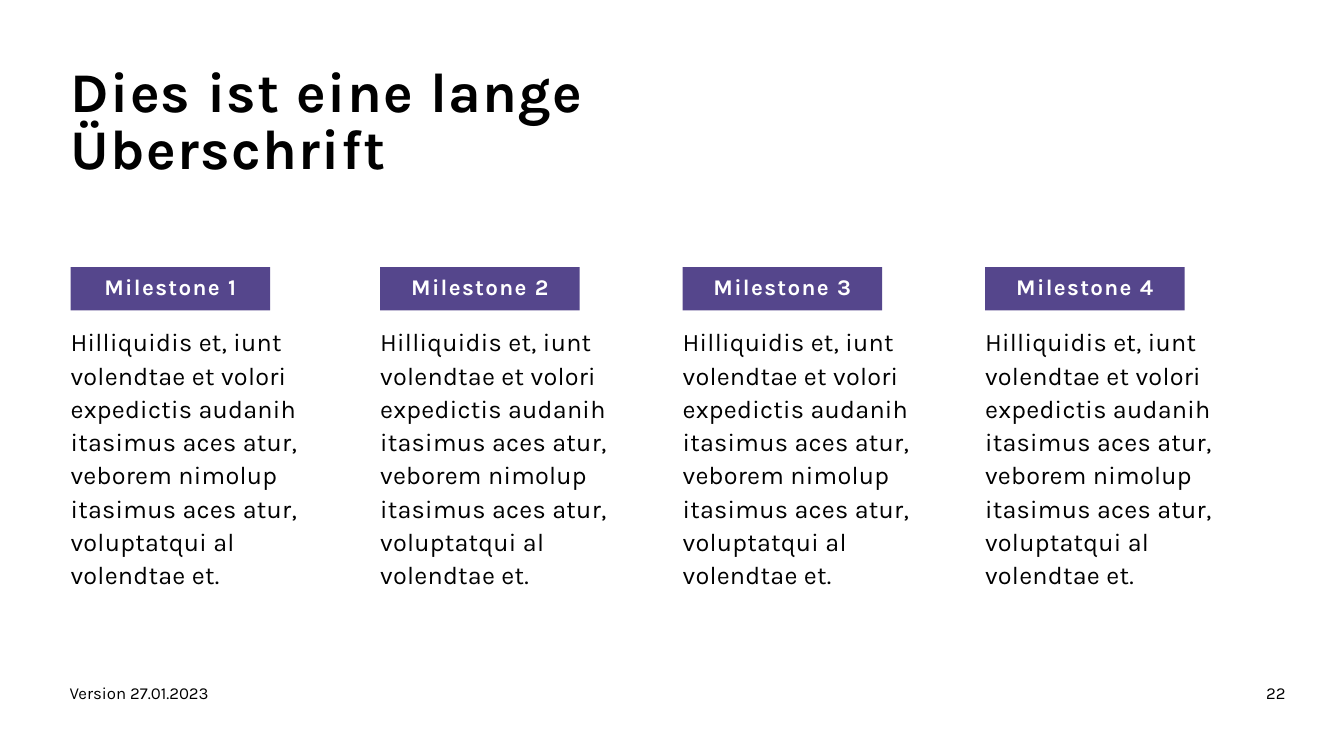
import pptx
import pptx.util
import pptx.dml.color
import pptx.enum.shapes
import pptx.enum.text

Inches, Pt = pptx.util.Inches, pptx.util.Pt
RGBColor = pptx.dml.color.RGBColor
ALIGN = pptx.enum.text.PP_ALIGN
ANCHOR = pptx.enum.text.MSO_ANCHOR

BLACK = RGBColor(0x00, 0x00, 0x00)
WHITE = RGBColor(0xFF, 0xFF, 0xFF)
PURPLE = RGBColor(0x55, 0x46, 0x8C)

TITLE = "Dies ist eine lange Überschrift"
BODY = ("Hilliquidis et, iunt volendtae et volori expedictis audanih "
        "itasimus aces atur, veborem nimolup itasimus aces atur, "
        "voluptatqui al volendtae et.")
MILESTONES = [("Milestone 1", 0.7), ("Milestone 2", 3.77),
              ("Milestone 3", 6.77), ("Milestone 4", 9.77)]
FOOTERS = [("Version 27.01.2023", (0.69, 6.77, 8.23, 0.4), ALIGN.LEFT),
           ("22", (10.6, 6.77, 2.15, 0.4), ALIGN.RIGHT)]

TITLE_FONT = {"size": Pt(40), "bold": True}
TAG_FONT = {"size": Pt(16), "bold": True}
BODY_FONT = {"size": Pt(18), "bold": False}
FOOTER_FONT = {"size": Pt(12), "bold": False}
FRAME = {"margin_left": 0, "margin_top": 0, "margin_right": 0,
         "margin_bottom": 0, "word_wrap": True,
         "auto_size": pptx.enum.text.MSO_AUTO_SIZE.NONE}


def set_all(target, values):
    """Set each named attribute on the target."""
    for name, value in values.items():
        setattr(target, name, value)


def write(sp, text, font, color=BLACK, align=ALIGN.LEFT, anchor=ANCHOR.TOP,
          line=1.0, tracking=0):
    """Fill a shape with one formatted paragraph."""
    tf = sp.text_frame
    set_all(tf, FRAME)
    tf.vertical_anchor = anchor
    p = tf.paragraphs[0]
    set_all(p, {"alignment": align, "line_spacing": line})
    r = p.add_run()
    r.text = text
    set_all(r.font, {"name": "Karla", **font})
    r.font.color.rgb = color
    if tracking:
        r._r.get_or_add_rPr().set("spc", str(round(tracking * 100)))


def main():
    """Build the milestone slide."""
    prs = pptx.Presentation()
    prs.slide_width, prs.slide_height = Inches(13.33), Inches(7.5)
    s = prs.slides.add_slide(prs.slide_layouts[5])

    title = s.shapes.title
    set_all(title, {"left": Inches(0.7), "top": Inches(0.66),
                    "width": Inches(8.2), "height": Inches(1.12)})
    write(title, TITLE, TITLE_FONT, line=0.85, tracking=1)

    for name, x in MILESTONES:
        tag = s.shapes.add_shape(
            pptx.enum.shapes.MSO_SHAPE.RECTANGLE,
            Inches(x), Inches(2.65), Inches(1.98), Inches(0.43))
        tag.shadow.inherit = False
        tag.fill.solid()
        tag.fill.fore_color.rgb = PURPLE
        tag.line.fill.background()
        write(tag, name, TAG_FONT, WHITE, ALIGN.CENTER, ANCHOR.MIDDLE, 0.85, 1)
        body = s.shapes.add_textbox(
            Inches(x), Inches(3.21), Inches(2.41), Inches(3.09))
        write(body, BODY, BODY_FONT, line=1.1, tracking=0.2)

    for text, box, align in FOOTERS:
        footer = s.shapes.add_textbox(*map(Inches, box))
        write(footer, text, FOOTER_FONT, align=align)

    prs.save("out.pptx")


if __name__ == "__main__":
    main()
